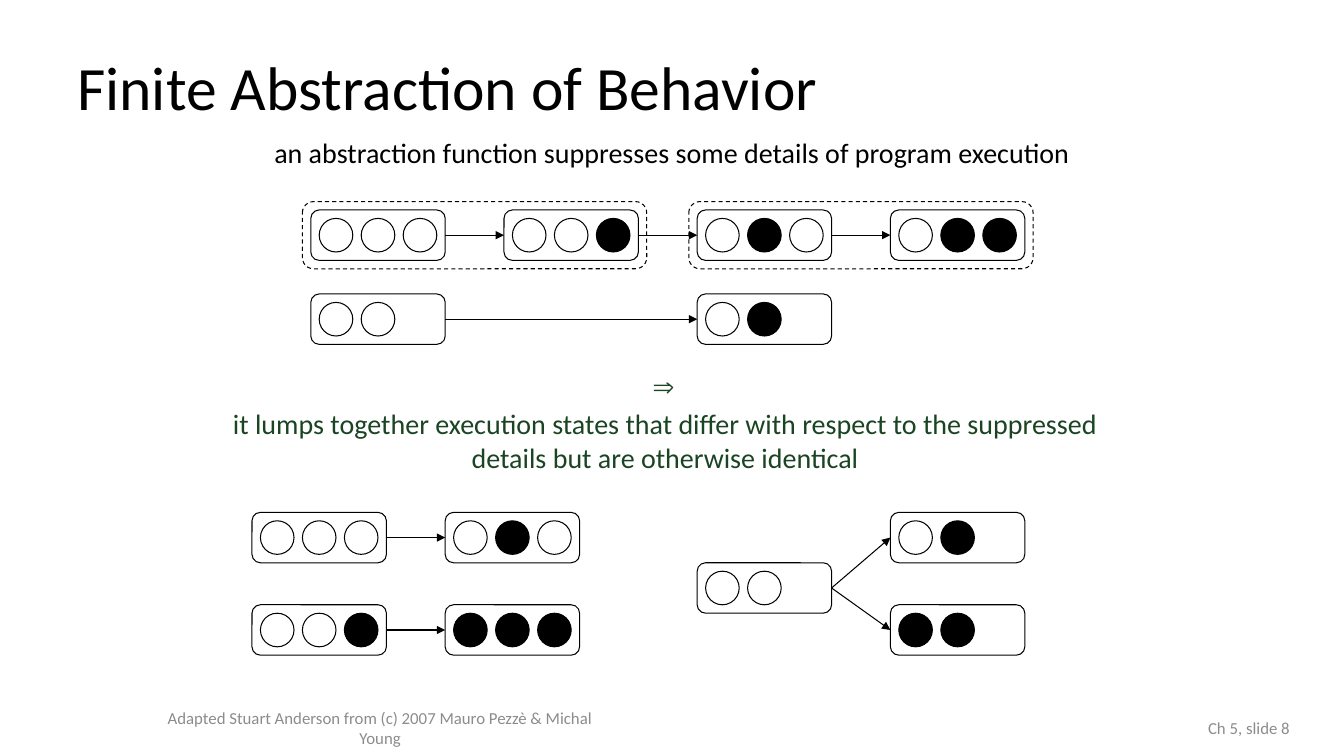
import pptx
import pptx.dml.color
import pptx.enum.dml
import pptx.enum.shapes
import pptx.enum.text
import pptx.oxml
import pptx.oxml.ns
import pptx.util
from lxml import etree

PX = 9525
SHAPES = pptx.enum.shapes.MSO_SHAPE
ALIGN = pptx.enum.text.PP_ALIGN
ANCHOR = pptx.enum.text.MSO_ANCHOR
BLACK, GREEN, GRAY = "000000", "1A4422", "8C8C8C"
STATE_WIDTH, STATE_HEIGHT, CIRCLE, GAP = 128, 48, 32, 8


def color(value):
    return pptx.dml.color.RGBColor.from_string(value)


def add_outline(parent, kind, left, top, width, height, fill=None):
    shape = parent.shapes.add_shape(kind, left * PX, top * PX, width * PX, height * PX)
    shape.shadow.inherit = False
    if fill:
        shape.fill.solid()
        shape.fill.fore_color.rgb = color(fill)
    else:
        shape.fill.background()
    shape.line.color.rgb = color(BLACK)
    shape.line.width = pptx.util.Pt(0.75)
    return shape


deck = pptx.Presentation()
deck.slide_width, deck.slide_height = 1280 * PX, 720 * PX
page = deck.slides.add_slide(deck.slide_layouts[5])

texts = {
    "title": ("Finite Abstraction of Behavior",
              (64, 29, 1152, 115), 44, BLACK, ALIGN.LEFT, ANCHOR.MIDDLE, 0.9),
    "premise": ("an abstraction function suppresses some details of program execution",
                (208, 128, 864, 48), 20, BLACK, ALIGN.CENTER, ANCHOR.TOP, 0.9),
    "conclusion": ("\vit lumps together execution states that differ with respect to the "
                   "suppressed details but are otherwise identical",
                   (208, 312, 851, 144), 20, GREEN, ALIGN.CENTER, ANCHOR.BOTTOM, 1.0),
    "credit": ("Adapted Stuart Anderson from (c) 2007 Mauro Pezzè & Michal Young",
               (138, 680, 448, 26), 12, GRAY, ALIGN.CENTER, ANCHOR.MIDDLE, 1.0),
    "number": ("Ch 5, slide 8",
               (939, 680, 299, 26), 12, GRAY, ALIGN.RIGHT, ANCHOR.MIDDLE, 1.0),
}
for role, (words, place, size, ink, align, anchor, spacing) in texts.items():
    box = page.shapes.title if role == "title" else page.shapes.add_textbox(0, 0, 0, 0)
    for name, length in zip(("left", "top", "width", "height"), place):
        setattr(box, name, length * PX)
    frame = box.text_frame
    frame.word_wrap = True
    frame.auto_size = pptx.enum.text.MSO_AUTO_SIZE.NONE
    frame.vertical_anchor = anchor
    para = frame.paragraphs[0]
    para.text = words
    para.alignment = align
    para.line_spacing = spacing
    font_format = {"name": "Calibri", "size": pptx.util.Pt(size)}
    for font in [para.font] + [span.font for span in para.runs]:
        for name, value in font_format.items():
            setattr(font, name, value)
        font.color.rgb = color(ink)
    if role == "conclusion":
        for line_break in para._p.findall(pptx.oxml.ns.qn("a:br")):
            etree.SubElement(line_break, pptx.oxml.ns.qn("a:rPr"), sz=str(size * 100))
        properties = para._p.get_or_add_pPr()
        bullet = etree.Element(pptx.oxml.ns.qn("a:buChar"), char="⇒")
        properties.find(pptx.oxml.ns.qn("a:lnSpc")).addnext(bullet)

for left in (288, 656):
    lump = add_outline(page, SHAPES.ROUNDED_RECTANGLE, left, 192, 328, 64)
    lump.line.dash_style = pptx.enum.dml.MSO_LINE.DASH

states = {
    "trace 1": (296, 200, "000"),
    "trace 2": (480, 200, "001"),
    "trace 3": (664, 200, "010"),
    "trace 4": (848, 200, "011"),
    "abstract 1": (296, 280, "00"),
    "abstract 2": (664, 280, "01"),
    "upper start": (240, 488, "000"),
    "upper end": (424, 488, "010"),
    "lower start": (240, 576, "001"),
    "lower end": (424, 576, "111"),
    "merged": (664, 536, "00"),
    "upper branch": (848, 488, "01"),
    "lower branch": (848, 576, "11"),
}
outlines = {}
for name, (left, top, bits) in states.items():
    group = page.shapes.add_group_shape()
    outlines[name] = add_outline(group, SHAPES.ROUNDED_RECTANGLE, left, top,
                                 STATE_WIDTH, STATE_HEIGHT)
    for index, bit in enumerate(bits):
        add_outline(group, SHAPES.OVAL, left + GAP + index * (CIRCLE + GAP), top + GAP,
                    CIRCLE, CIRCLE, BLACK if bit == "1" else None)

transitions = [
    ("trace 1", "trace 2"), ("trace 2", "trace 3"), ("trace 3", "trace 4"),
    ("abstract 1", "abstract 2"),
    ("upper start", "upper end"), ("lower start", "lower end"),
    ("merged", "upper branch"), ("merged", "lower branch"),
]
for source, target in transitions:
    arrow = page.shapes.add_connector(pptx.enum.shapes.MSO_CONNECTOR.STRAIGHT, 0, 0, 0, 0)
    arrow.begin_connect(outlines[source], 3)
    arrow.end_connect(outlines[target], 1)
    arrow.line.color.rgb = color(BLACK)
    arrow.line.width = pptx.util.Pt(0.75)
    etree.SubElement(arrow.line._get_or_add_ln(), pptx.oxml.ns.qn("a:tailEnd"), type="triangle")
    etree.SubElement(arrow._element.spPr, pptx.oxml.ns.qn("a:effectLst"))

deck.save("out.pptx")
